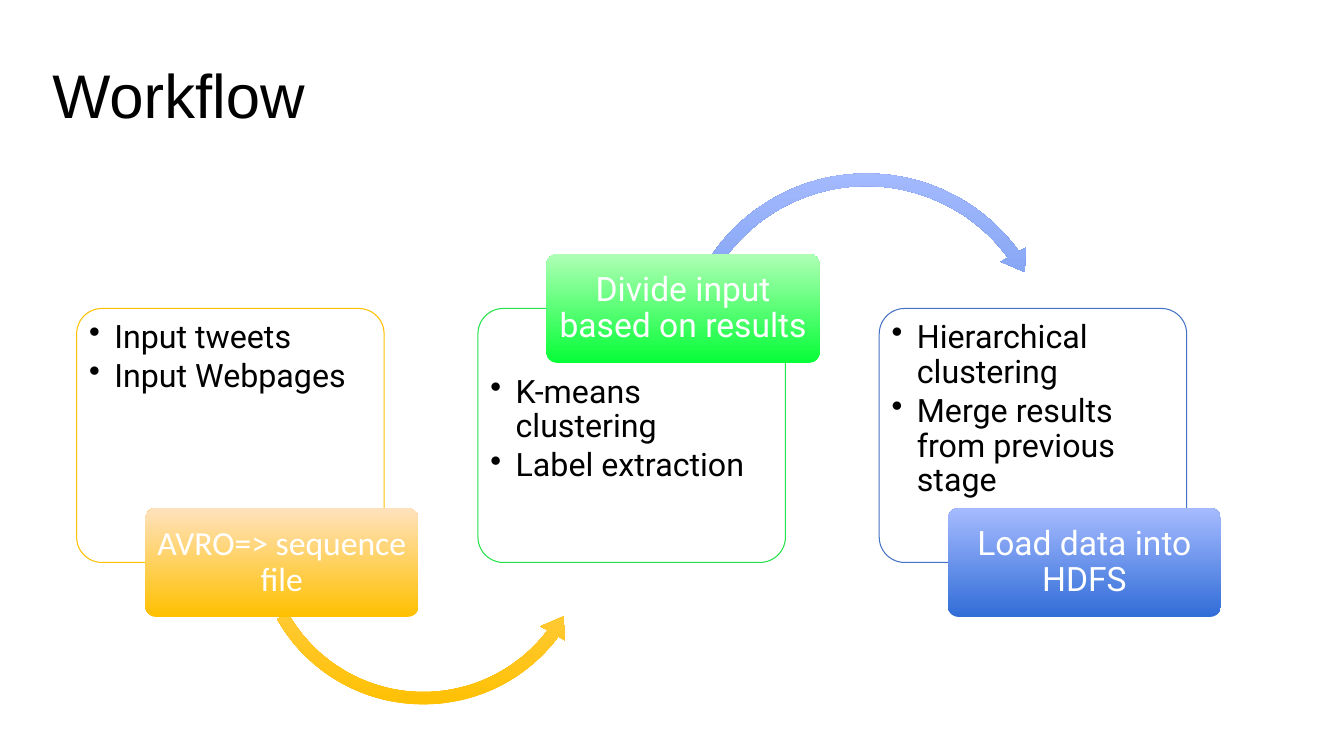
import pptx
import pptx.dml.color
import pptx.enum.shapes
import pptx.enum.text
import pptx.oxml.ns
import pptx.util
from lxml import etree

Inches = pptx.util.Inches
Pt = pptx.util.Pt
MSO_SHAPE = pptx.enum.shapes.MSO_SHAPE
PP_ALIGN = pptx.enum.text.PP_ALIGN
MSO_ANCHOR = pptx.enum.text.MSO_ANCHOR


def rgb(hex_code):
    return pptx.dml.color.RGBColor.from_string(hex_code)


class WorkflowSlide:
    """Holds the text style and the slide, and draws each kind of element."""

    title_font = "Arial"
    body_font = "Roboto"
    ink = "000000"
    paper = "FFFFFF"

    def __init__(self, deck):
        self.slide = deck.slides.add_slide(deck.slide_layouts[5])

    def title(self, wording):
        heading = self.slide.shapes.title
        heading.left, heading.top = Inches(0.42), Inches(0.25)
        heading.width, heading.height = Inches(11.5), Inches(1.45)
        heading.text_frame.auto_size = pptx.enum.text.MSO_AUTO_SIZE.NONE
        self.wording(heading, [wording], 44, self.title_font, self.ink,
                     PP_ALIGN.LEFT, MSO_ANCHOR.MIDDLE)

    def wording(self, shape, lines, size, font, color, align, anchor, space_after=0):
        frame = shape.text_frame
        frame.word_wrap = True
        frame.vertical_anchor = anchor
        frame.text = "\n".join(lines)
        for paragraph in frame.paragraphs:
            paragraph.alignment = align
            paragraph.line_spacing = 0.9
            paragraph.space_after = Pt(space_after)
            paragraph.font.size = Pt(size)
            paragraph.font.name = font
            paragraph.font.color.rgb = rgb(color)

    def shape(self, preset, left, top, width, height, adjustments):
        outline = self.slide.shapes.add_shape(
            preset, Inches(left), Inches(top), Inches(width), Inches(height))
        outline.shadow.inherit = False
        for index, value in enumerate(adjustments):
            outline.adjustments[index] = value
        return outline

    def gradient(self, shape, bottom, top):
        shape.fill.gradient()
        shape.fill.gradient_angle = 90
        for stop, color in zip(shape.fill.gradient_stops, (bottom, top)):
            stop.color.rgb = rgb(color)
        shape.line.fill.background()

    def margins(self, shape, side, top, bottom):
        frame = shape.text_frame
        frame.margin_left = frame.margin_right = Inches(side)
        frame.margin_top, frame.margin_bottom = Inches(top), Inches(bottom)

    def card(self, left, top, steps, border, text_drop):
        card = self.shape(MSO_SHAPE.ROUNDED_RECTANGLE, left, top, 3.05, 2.52, [0.1])
        card.fill.solid()
        card.fill.fore_color.rgb = rgb(self.paper)
        card.line.color.rgb = rgb(border)
        card.line.width = Pt(0.75)
        self.margins(card, 0.05, 0.05 + text_drop, 0.05)
        self.wording(card, steps, 23, self.body_font, self.ink,
                     PP_ALIGN.LEFT, MSO_ANCHOR.TOP, 3)
        for paragraph in card.text_frame.paragraphs:
            self.bullet(paragraph)

    def bullet(self, paragraph):
        properties = paragraph._p.get_or_add_pPr()
        properties.set("marL", str(Inches(0.25)))
        properties.set("indent", str(Inches(-0.25)))
        mark = etree.Element(pptx.oxml.ns.qn("a:buChar"), char="•")
        properties.find(pptx.oxml.ns.qn("a:defRPr")).addprevious(mark)

    def label(self, left, top, wording, colors, font):
        label = self.shape(MSO_SHAPE.ROUNDED_RECTANGLE, left, top, 2.71, 1.08, [0.1])
        self.gradient(label, *colors)
        self.margins(label, 0.05, 0.03, 0.03)
        self.wording(label, [wording], 24, font, self.paper,
                     PP_ALIGN.CENTER, MSO_ANCHOR.MIDDLE)

    def arrow(self, preset, left, top, size, adjustments, colors):
        self.gradient(self.shape(preset, left, top, size, size, adjustments), *colors)


def main():
    deck = pptx.Presentation()
    deck.slide_width, deck.slide_height = Inches(13.33), Inches(7.5)
    workflow = WorkflowSlide(deck)
    workflow.title("Workflow")

    amber, green, blue = ("FFC000", "FFE2BD"), ("06FE37", "AFFFB5"), ("316DD7", "A6BBFF")
    lower_arrow = (MSO_SHAPE.LEFT_CIRCULAR_ARROW, 2.45, 3.57, 3.5,
                   [0.035, 4.392, 22.148, 90.245, 0.041], amber)
    upper_arrow = (MSO_SHAPE.CIRCULAR_ARROW, 6.65, 1.64, 3.89,
                   [0.032, 3.919, 194.379, 125.808, 0.037], blue)
    stages = [
        (["Input tweets", "Input Webpages"], "FFC000", 0,
         "AVRO=> sequence file", 5.04, amber, "Calibri", lower_arrow),
        (["K-means clustering", "Label extraction"], "23E148", 0.54,
         "Divide input based on results", 2.52, green, "Roboto", upper_arrow),
        (["Hierarchical clustering", "Merge results from previous stage"], "4472C4", 0,
         "Load data into HDFS", 5.04, blue, "Roboto", None),
    ]
    for index, stage in enumerate(stages):
        steps, border, text_drop, wording, label_top, colors, font, arrow = stage
        left = 0.76 + 3.98 * index
        workflow.card(left, 3.06, steps, border, text_drop)
        if arrow:
            workflow.arrow(*arrow)
        workflow.label(left + 0.68, label_top, wording, colors, font)

    deck.save("out.pptx")


if __name__ == "__main__":
    main()
